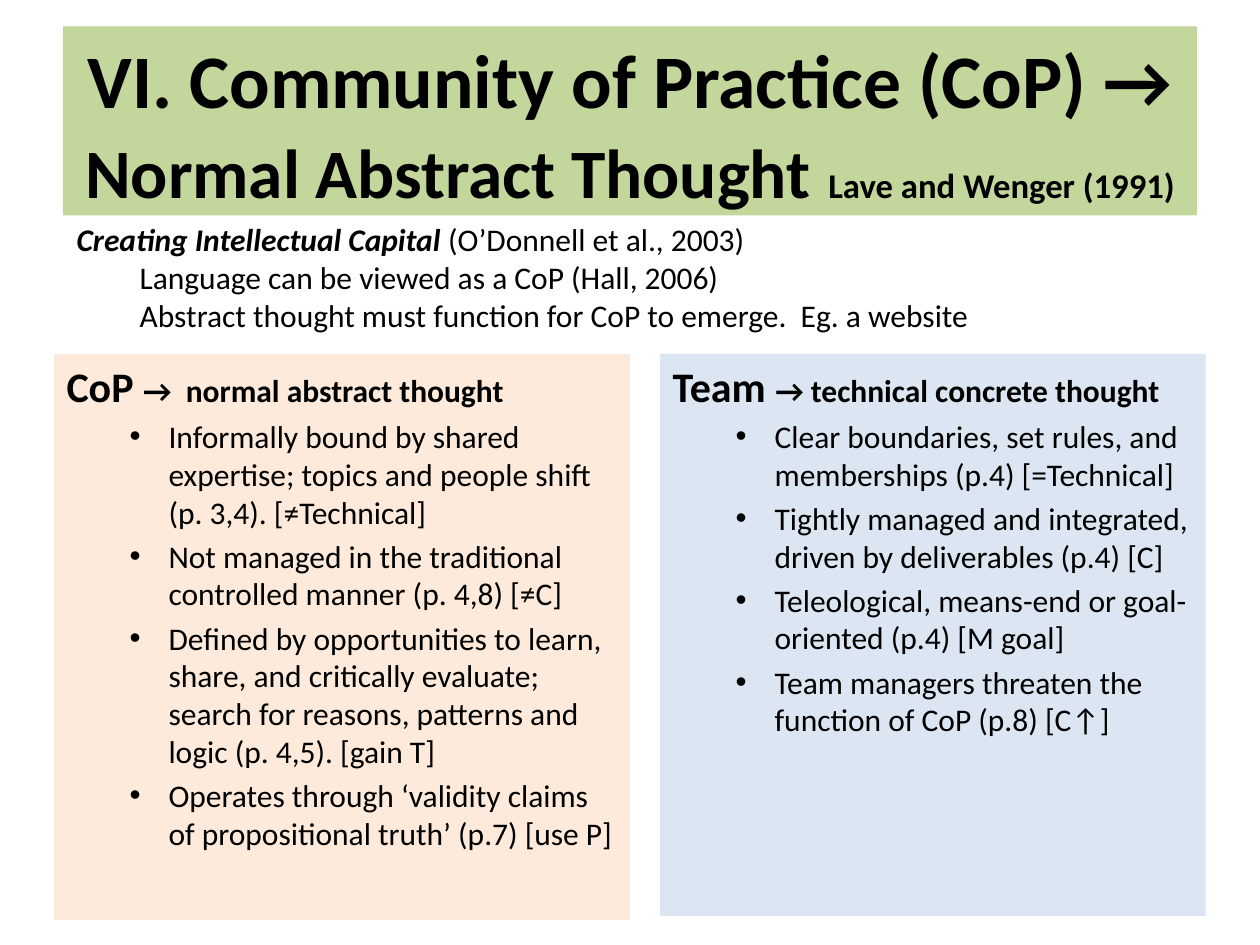
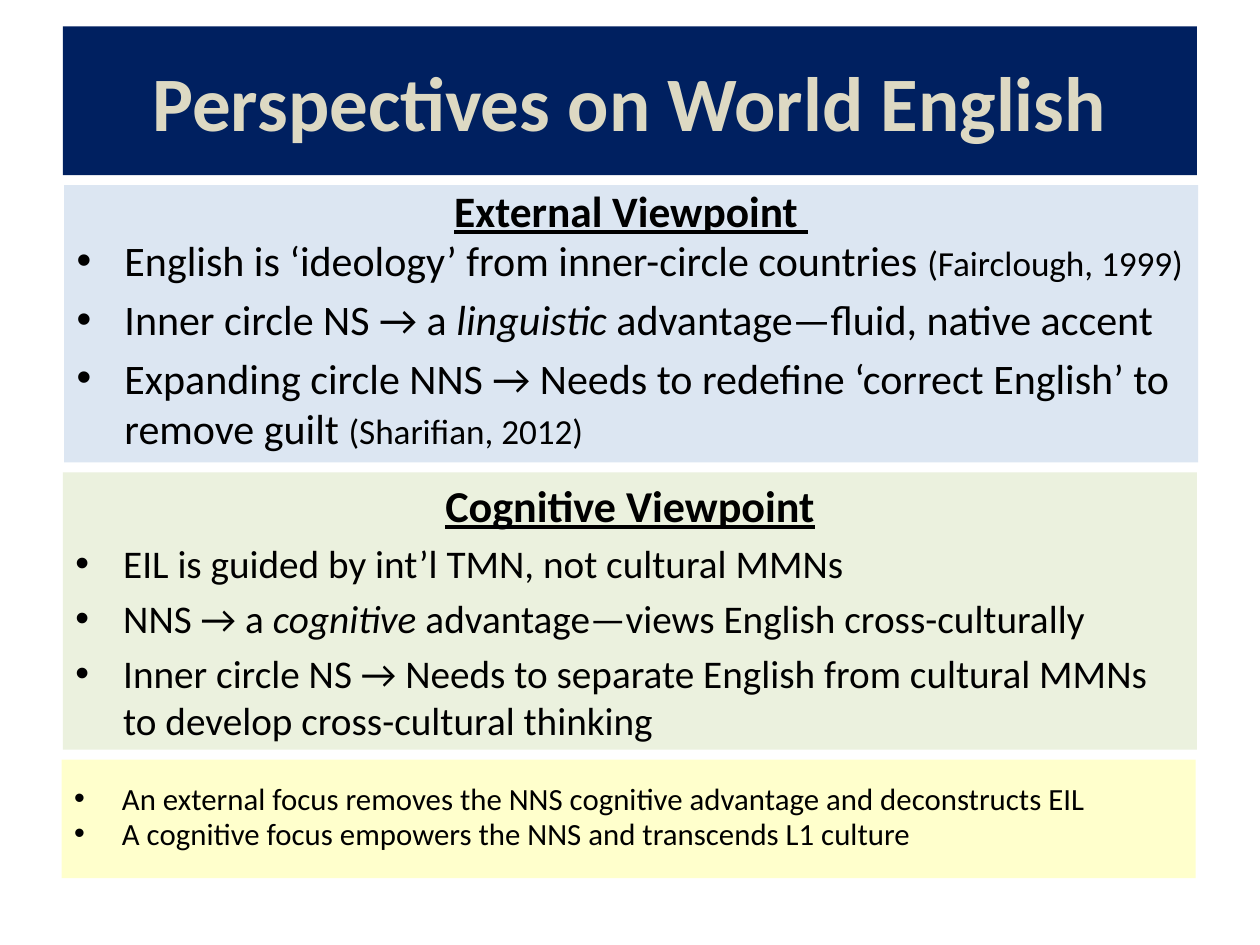
"""Build two slides on communities of practice and on views of World English."""
from lxml.etree import SubElement as Sub
from pptx import Presentation
from pptx.dml.color import RGBColor as Rgb
from pptx.enum.shapes import MSO_SHAPE as Shape
from pptx.enum.text import MSO_ANCHOR as Anchor, PP_ALIGN as Align
from pptx.oxml.ns import qn
from pptx.util import Inches, Pt

FONT = "Calibri"
BLACK, NAVY, SAND = "000000", "002060", "DDD9C3"
LIME, PEACH, BLUE, SAGE, CREAM = "C3D69B", "FDEADA", "DCE6F2", "EBF1DE", "FFFFCC"
EDGE, TOP, WIDE, GAP = 0.5, 0.21, 9, 0.08
ITALIC = {"italic": True}
CITE = {"size": 20.1}

COP_TITLE = [
    "VI. Community of Practice (CoP) → ",
    ("Normal Abstract Thought", {"size": 39.6}),
    " ",
    ("Lave and Wenger (1991)", {"size": 19.8}),
]
INTRO = [
    [("Creating Intellectual Capital ", {"bold": True, "italic": True}),
     "(O’Donnell et al., 2003)"],
    ["Language can be viewed as a CoP (Hall, 2006)"],
    ["Abstract thought must function for CoP to emerge.  Eg. a website"],
]
CARDS = [
    {"box": (0.43, 2.81, 4.57, 4.49), "fill": PEACH,
     "head": "CoP ", "tail": "→  normal abstract thought",
     "list": [
         "Informally bound by shared expertise; topics and people shift "
         "(p. 3,4). [≠Technical]",
         "Not managed in the traditional controlled manner (p. 4,8) [≠C]",
         "Defined by opportunities to learn, share, and critically evaluate; "
         "search for reasons, patterns and logic (p. 4,5). [gain T]",
         "Operates through ‘validity claims of propositional truth’ (p.7) [use P]"]},
    {"box": (5.24, 2.81, 4.33, 4.46), "fill": BLUE,
     "head": "Team ", "tail": "→ technical concrete thought",
     "list": [
         "Clear boundaries, set rules, and memberships (p.4) [=Technical]",
         "Tightly managed and integrated, driven by deliverables (p.4) [C]",
         "Teleological, means-end or goal-oriented (p.4) [M goal]",
         "Team managers threaten the function of CoP (p.8) [C↑]"]},
]
VIEWS = [
    {"left": 0.51, "high": 2.2, "fill": BLUE, "size": 24, "tight": 1,
     "head": ("External Viewpoint ", 24.8, 0.8),
     "list": [
         ["English is ‘ideology’ from inner-circle countries ",
          ("(Fairclough, 1999)", CITE)],
         ["Inner circle NS → a ", ("linguistic", ITALIC),
          " advantage—fluid, native accent"],
         ["Expanding circle NNS → Needs to redefine ‘correct English’ to "
          "remove guilt ", ("(Sharifian, 2012)", CITE)]]},
    {"left": 0.5, "high": 2.2, "fill": SAGE, "size": 22.4, "tight": 0,
     "head": ("Cognitive Viewpoint", 25.2, 1),
     "list": [
         ["EIL is guided by int’l TMN, not cultural MMNs"],
         ["NNS → a ", ("cognitive", ITALIC),
          " advantage—views English cross-culturally"],
         ["Inner circle NS → Needs to separate English from cultural MMNs "
          "to develop cross-cultural thinking"]]},
    {"left": 0.49, "high": 0.94, "fill": CREAM, "size": 17.6, "tight": 2,
     "head": None,
     "list": [
         ["An external focus removes the NNS cognitive advantage and "
          "deconstructs EIL"],
         ["A cognitive focus empowers the NNS and transcends L1 culture"]]},
]


def tint(code):
    return Rgb.from_string(code)


def frame(slide, box, fill=None, anchor=Anchor.TOP):
    spot = [Inches(n) for n in box]
    if fill:
        item = slide.shapes.add_shape(Shape.RECTANGLE, *spot)
        item.shadow.inherit = False
        item.fill.solid()
        item.fill.fore_color.rgb = tint(fill)
        item.line.fill.background()
    else:
        item = slide.shapes.add_textbox(*spot)
    body = item.text_frame
    body.word_wrap = True
    body.vertical_anchor = anchor
    return body


def write(body, runs, size=18, color=BLACK, bold=False, under=False,
          align=Align.LEFT, left=0, hang=0, lead=1, rise=0, dot=False):
    para = body.paragraphs[0]
    if para.runs:
        para = body.add_paragraph()
    para.alignment = align
    para.line_spacing = lead
    para.space_before = Pt(round(rise * size, 1))
    props = para._p.get_or_add_pPr()
    props.set("marL", str(Inches(left)))
    props.set("indent", str(Inches(-hang)))
    if dot:
        Sub(props, qn("a:buFont")).set("typeface", "Arial")
        Sub(props, qn("a:buChar")).set("char", "•")
    for part in runs:
        words, own = (part, {}) if isinstance(part, str) else part
        run = para.add_run()
        run.text = words
        font = run.font
        font.name = FONT
        font.size = Pt(own.get("size", size))
        font.bold = own.get("bold", bold)
        font.italic = own.get("italic", False)
        font.underline = under
        font.color.rgb = tint(color)


def title(slide, runs, high, fill, anchor, **kind):
    body = frame(slide, (EDGE, TOP, WIDE, high), fill, anchor)
    write(body, runs, bold=True, align=Align.CENTER, **kind)


def practice(slide):
    title(slide, COP_TITLE, 1.5, LIME, Anchor.TOP, size=43.2)
    for card in CARDS:
        body = frame(slide, card["box"], card["fill"])
        write(body, [(card["head"], {"size": 24}), card["tail"]], bold=True)
        for line in card["list"]:
            write(body, [line], left=0.81, hang=0.31, rise=0.2, dot=True)
    body = frame(slide, (0.51, 1.7, 8.98, 1.92))
    for rank, runs in enumerate(INTRO):
        write(body, runs, left=0.5 if rank else 0)


def english(slide):
    high = 1.18
    title(slide, ["Perspectives on World English"], high, NAVY, Anchor.MIDDLE,
          size=44, color=SAND)
    top = TOP + high + GAP
    for view in VIEWS:
        box = (view["left"], top, WIDE, view["high"])
        body = frame(slide, box, view["fill"], Anchor.MIDDLE)
        if view["head"]:
            words, size, lead = view["head"]
            write(body, [words], size=size, lead=lead, bold=True, under=True,
                  align=Align.CENTER, left=0.38, hang=0.38, rise=0.2)
        for rank, runs in enumerate(view["list"]):
            write(body, runs, size=view["size"], left=0.38, hang=0.38, rise=0.2,
                  lead=0.8 if rank < view["tight"] else 1, dot=True)
        top += view["high"] + GAP


def main():
    deck = Presentation()
    deck.slide_width, deck.slide_height = Inches(10), Inches(7.5)
    for build in (practice, english):
        build(deck.slides.add_slide(deck.slide_layouts[6]))
    deck.save("out.pptx")


if __name__ == "__main__":
    main()
